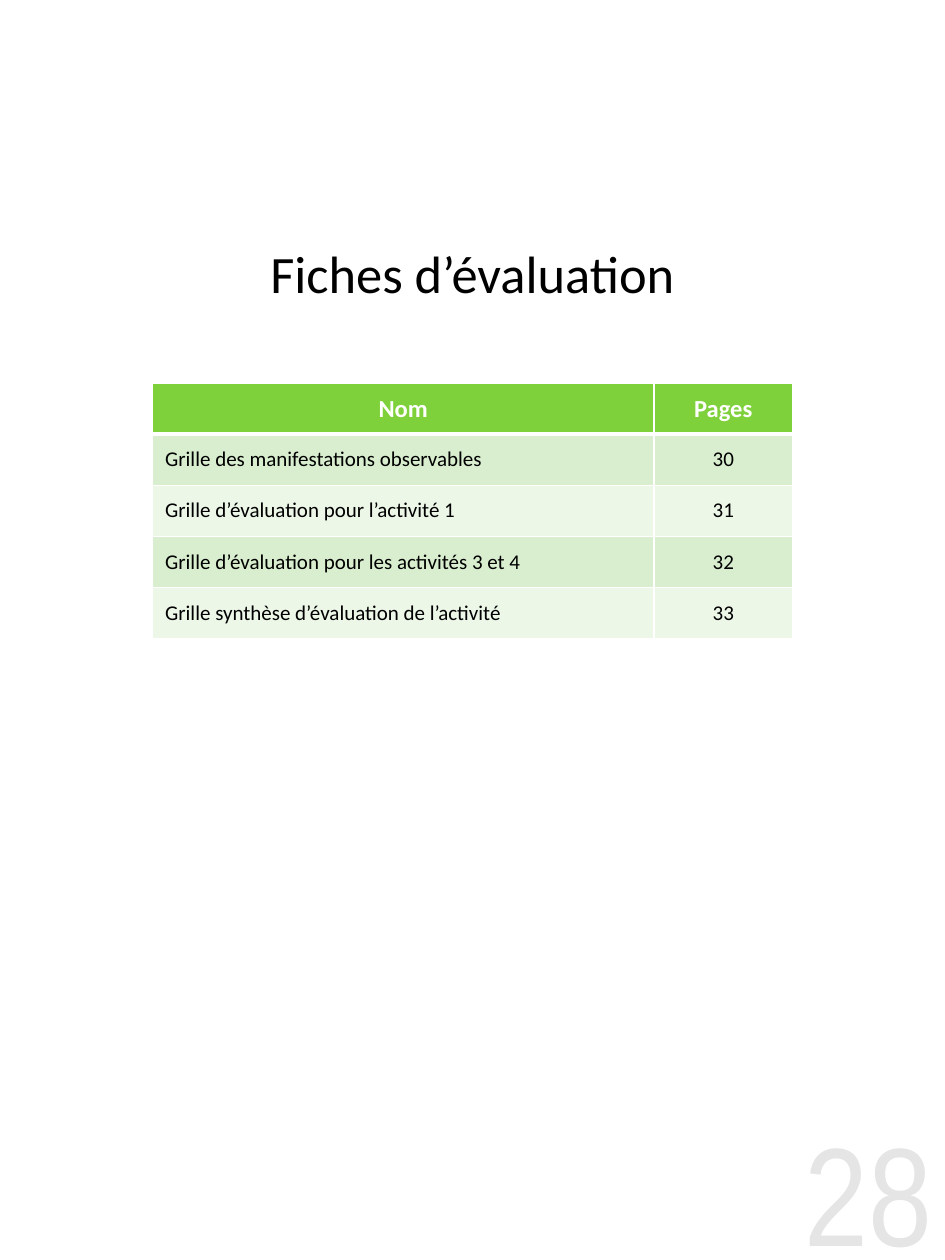
from dataclasses import dataclass
from lxml import etree
from pptx import Presentation
from pptx import util as u
from pptx.dml.color import RGBColor
from pptx.enum import text
from pptx.oxml.ns import qn

HUES = {
    "ink": "000000",
    "white": "FFFFFF",
    "head": "7FD13B",
    "dark": "D8EECE",
    "light": "ECF7E8",
    "page": "E5E5E5",
}
LEFT, MID, RIGHT = text.PP_ALIGN.LEFT, text.PP_ALIGN.CENTER, text.PP_ALIGN.RIGHT


@dataclass
class Style:
    size: float
    hue: str = "ink"
    font: str = "Calibri"
    bold: bool = False


@dataclass
class Label:
    words: str
    box: tuple[float, float, float, float]
    align: text.PP_ALIGN
    style: Style


def write(frame, words: str, align: text.PP_ALIGN, style: Style) -> None:
    para = frame.paragraphs[0]
    para.alignment = align
    run = para.add_run()
    run.text = words
    run.font.size = u.Pt(style.size)
    run.font.name = style.font
    run.font.bold = style.bold
    run.font.color.rgb = RGBColor.from_string(HUES[style.hue])


def draw_label(slide, label: Label) -> None:
    frame = slide.shapes.add_textbox(*map(u.Pt, label.box)).text_frame
    frame.word_wrap = True
    frame.vertical_anchor = text.MSO_ANCHOR.MIDDLE
    frame.margin_top = frame.margin_bottom = 0
    write(frame, label.words, label.align, label.style)


def edge(cell, side: str, width: float) -> None:
    props = cell._tc.get_or_add_tcPr()
    line = etree.SubElement(props, qn(f"a:ln{side}"), w=str(u.Pt(width)))
    fill = etree.SubElement(line, qn("a:solidFill"))
    etree.SubElement(fill, qn("a:srgbClr"), val=HUES["white"])


def draw_cell(cell, words: str, row: int, col: int) -> None:
    # White rules, thicker under the header
    rules = {"L": 1, "R": 1, "T": 3 if row == 1 else 1, "B": 3 if row == 0 else 1}
    for side, width in rules.items():
        edge(cell, side, width)
    # Header colour, then alternating bands
    hue = "head" if row == 0 else ("light", "dark")[row % 2]
    cell.fill.solid()
    cell.fill.fore_color.rgb = RGBColor.from_string(HUES[hue])
    cell.vertical_anchor = text.MSO_ANCHOR.MIDDLE
    style = Style(14, "white", bold=True) if row == 0 else Style(12)
    write(cell.text_frame, words, LEFT if row and col == 0 else MID, style)


def draw_table(slide, rows: list[tuple[str, str]], left: float, top: float,
               widths: tuple[float, ...], height: float) -> None:
    box = (left, top, sum(widths), height * len(rows))
    table = slide.shapes.add_table(len(rows), len(widths), *map(u.Pt, box)).table
    for col, width in enumerate(widths):
        table.columns[col].width = u.Pt(width)
    for row, cells in enumerate(rows):
        table.rows[row].height = u.Pt(height)
        for col, words in enumerate(cells):
            draw_cell(table.cell(row, col), words, row, col)


TITLE = Label("Fiches d’évaluation", (0, 121.7, 540, 68.4), MID, Style(30))
PAGE = Label("28", (420, 632, 120, 96), RIGHT, Style(80, "page", "Arial Narrow"))
ROWS = [
    ("Nom", "Pages"),
    ("Grille des manifestations observables", "30"),
    ("Grille d’évaluation pour l’activité 1", "31"),
    ("Grille d’évaluation pour les activités 3 et 4", "32"),
    ("Grille synthèse d’évaluation de l’activité", "33"),
]


def main() -> None:
    deck = Presentation()
    deck.slide_width, deck.slide_height = u.Pt(540), u.Pt(720)
    slide = deck.slides.add_slide(deck.slide_layouts[6])
    # Page number, title and list of sheets
    draw_label(slide, PAGE)
    draw_label(slide, TITLE)
    draw_table(slide, ROWS, 87.2, 218.9, (286.5, 79.2), 29.2)
    deck.save("out.pptx")


if __name__ == "__main__":
    main()
